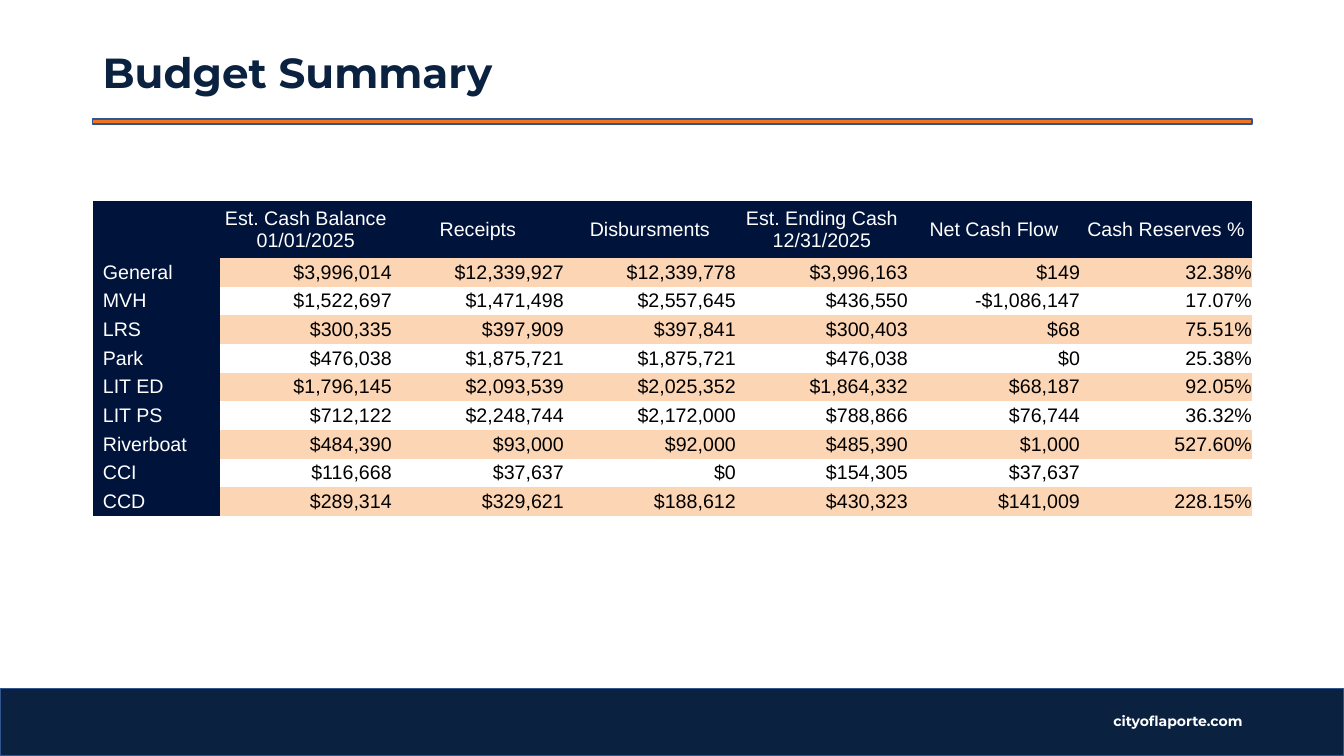
from dataclasses import dataclass

from pptx import Presentation
from pptx.dml.color import RGBColor as RGB
from pptx.enum.shapes import MSO_SHAPE as SHAPE
from pptx.enum.text import MSO_ANCHOR as ANCHOR, PP_ALIGN as ALIGN
from pptx.util import Inches, Pt


@dataclass(frozen=True)
class Theme:
    navy: RGB = RGB(0x0A, 0x22, 0x40)
    orange: RGB = RGB(0xEE, 0x76, 0x23)
    outline: RGB = RGB(0x32, 0x54, 0x91)
    header: RGB = RGB(0x00, 0x13, 0x3A)
    band: RGB = RGB(0xFC, 0xD5, 0xB4)
    white: RGB = RGB(0xFF, 0xFF, 0xFF)
    black: RGB = RGB(0x00, 0x00, 0x00)
    heading_font: str = "Montserrat"
    table_font: str = "Arial"
    title_size: int = 30
    table_size: int = 14
    footer_size: int = 10


THEME = Theme()
SLIDE_W, SLIDE_H = 13.33, 7.5
MARGIN, CONTENT_W = 0.92, 11.5
NO_GRID_STYLE = "{2D5ABB26-0587-4C30-8999-92F81FD0307C}"

COLUMNS = ["", "Est. Cash Balance 01/01/2025", "Receipts", "Disbursments",
           "Est. Ending Cash 12/31/2025", "Net Cash Flow", "Cash Reserves %"]
FUNDS = [
    ["General", "$3,996,014", "$12,339,927", "$12,339,778", "$3,996,163", "$149", "32.38%"],
    ["MVH", "$1,522,697", "$1,471,498", "$2,557,645", "$436,550", "-$1,086,147", "17.07%"],
    ["LRS", "$300,335", "$397,909", "$397,841", "$300,403", "$68", "75.51%"],
    ["Park", "$476,038", "$1,875,721", "$1,875,721", "$476,038", "$0", "25.38%"],
    ["LIT ED", "$1,796,145", "$2,093,539", "$2,025,352", "$1,864,332", "$68,187", "92.05%"],
    ["LIT PS", "$712,122", "$2,248,744", "$2,172,000", "$788,866", "$76,744", "36.32%"],
    ["Riverboat", "$484,390", "$93,000", "$92,000", "$485,390", "$1,000", "527.60%"],
    ["CCI", "$116,668", "$37,637", "$0", "$154,305", "$37,637", ""],
    ["CCD", "$289,314", "$329,621", "$188,612", "$430,323", "$141,009", "228.15%"],
]


def style_paragraph(paragraph, font_name, size, color, bold=False, align=ALIGN.LEFT):
    paragraph.alignment = align
    font = paragraph.font
    font.name, font.size, font.bold = font_name, Pt(size), bold
    font.color.rgb = color


def add_bar(slide, left, top, width, height, color):
    bar = slide.shapes.add_shape(
        SHAPE.RECTANGLE, Inches(left), Inches(top), Inches(width), Inches(height))
    bar.shadow.inherit = False
    bar.fill.solid()
    bar.fill.fore_color.rgb = color
    bar.line.color.rgb = THEME.outline
    bar.line.width = Pt(1)


def add_heading_text(slide, left, top, width, height, text, size, color, align=ALIGN.LEFT):
    frame = slide.shapes.add_textbox(
        Inches(left), Inches(top), Inches(width), Inches(height)).text_frame
    frame.word_wrap = True
    frame.vertical_anchor = ANCHOR.MIDDLE
    frame.text = text
    line = frame.paragraphs[0]
    style_paragraph(line, THEME.heading_font, size, color, True, align)
    return line


def add_title(slide, left, top, width):
    """Slide title with the orange rule beneath it."""
    title = add_heading_text(slide, left, top, width, 0.57, "Budget Summary",
                             THEME.title_size, THEME.navy)
    title.line_spacing = 0.9
    add_bar(slide, left, top + 0.72, width, 0.05, THEME.orange)


def add_footer(slide, left, top, width, height):
    add_bar(slide, left, top, width, height, THEME.navy)
    address_w = 1.75
    add_heading_text(slide, MARGIN + CONTENT_W - address_w, top + 0.19, address_w, 0.27,
                     "cityoflaporte.com", THEME.footer_size, THEME.white, ALIGN.RIGHT)


def fill_cell(cell, text, row, column):
    """Write one cell; its row and column decide fill, colour and alignment."""
    is_label = row == 0 or column == 0
    cell.margin_left = Inches(0.1 if column == 0 else 0)
    cell.margin_right = cell.margin_top = cell.margin_bottom = 0
    cell.vertical_anchor = ANCHOR.MIDDLE
    if is_label or row % 2:
        cell.fill.solid()
        cell.fill.fore_color.rgb = THEME.header if is_label else THEME.band
    else:
        cell.fill.background()
    if text:
        cell.text = text
    align = ALIGN.LEFT if column == 0 else ALIGN.CENTER if row == 0 else ALIGN.RIGHT
    style_paragraph(cell.text_frame.paragraphs[0], THEME.table_font, THEME.table_size,
                    THEME.white if is_label else THEME.black, align=align)


def add_budget_table(slide, left, top, width, height):
    rows = [COLUMNS] + FUNDS
    budget = slide.shapes.add_table(
        len(rows), len(COLUMNS), Inches(left), Inches(top), Inches(width), Inches(height)).table
    budget.first_row = budget.horz_banding = False
    budget._tbl.tblPr[0].text = NO_GRID_STYLE

    label_w, header_h = 1.26, 0.57
    amount_w = (width - label_w) / (len(COLUMNS) - 1)
    fund_h = (height - header_h) / len(FUNDS)
    for index, column in enumerate(budget.columns):
        column.width = Inches(amount_w if index else label_w)
    for index, row in enumerate(budget.rows):
        row.height = Inches(fund_h if index else header_h)
    for r, values in enumerate(rows):
        for c, text in enumerate(values):
            fill_cell(budget.cell(r, c), text, r, c)


def main():
    deck = Presentation()
    deck.slide_width, deck.slide_height = Inches(SLIDE_W), Inches(SLIDE_H)
    slide = deck.slides.add_slide(deck.slide_layouts[6])
    add_footer(slide, 0, 6.83, SLIDE_W, 0.67)
    add_title(slide, MARGIN, 0.46, CONTENT_W)
    add_budget_table(slide, MARGIN, 1.99, CONTENT_W, 3.13)
    deck.save("out.pptx")


if __name__ == "__main__":
    main()
